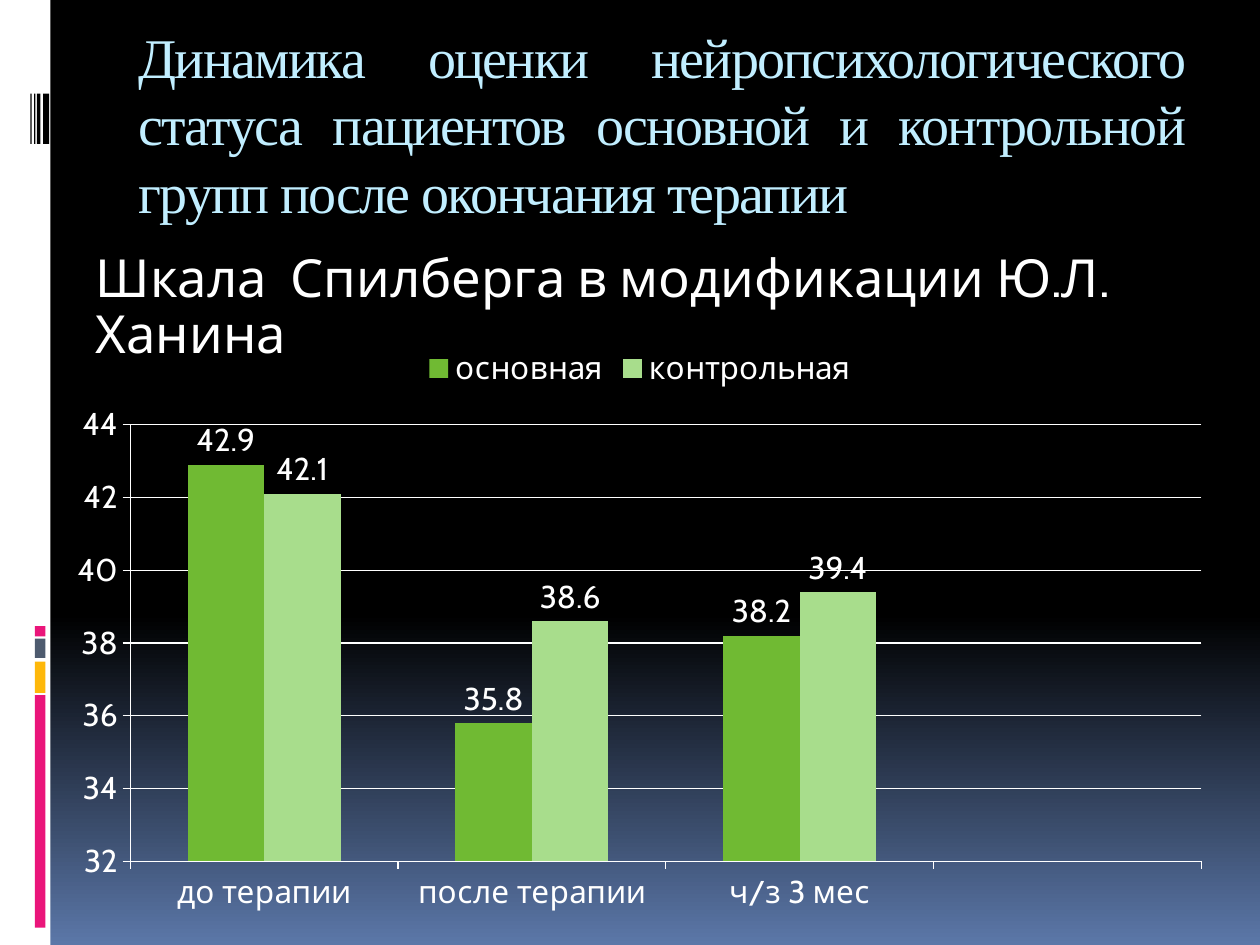
from typing import NamedTuple

from pptx import Presentation
from pptx.chart.data import CategoryChartData
from pptx.dml.color import RGBColor
from pptx.enum import chart as charts, shapes, text
from pptx.util import Pt

WHITE, BLACK, PINK = "FFFFFF", "000000", "EA157A"


class Bar(NamedTuple):
    left: float
    top: float
    width: float
    height: float
    color: str


class Series(NamedTuple):
    name: str
    values: tuple
    color: str


SIDE_BARS = [
    Bar(0, 0, 28.8, 540, WHITE),
    Bar(20, 397.2, 6, 133, PINK),
    Bar(20, 378, 6, 18, "FEB80A"),
    Bar(20, 365, 6, 11, "4E5B6F"),
    Bar(20, 357.8, 6, 5.8, PINK),
] + [
    Bar(left, 53.5, width, 28.8, BLACK)
    for left, width in ((24.6, 3.5), (21.1, 2.1), (19.5, 0.7), (17.4, 0.7))
]
CATEGORIES = ["до терапии", "после терапии", "ч/з 3 мес", ""]
SERIES = [
    Series("основная", (42.9, 35.8, 38.2, None), "70BA33"),
    Series("контрольная", (42.1, 38.6, 39.4, None), "A8DD8C"),
]


def rgb(color: str) -> RGBColor:
    return RGBColor.from_string(color)


def paint(fill, color: str) -> None:
    fill.solid()
    fill.fore_color.rgb = rgb(color)


def style_font(font, size: float, name: str, color: str) -> None:
    font.size, font.name = Pt(size), name
    font.color.rgb = rgb(color)


def draw_background(page) -> None:
    fill = page.background.fill
    fill.gradient()
    fill.gradient_angle = 270
    for stop, position, color in zip(fill.gradient_stops, (0.65, 1), (BLACK, "5B77A8")):
        stop.position = position
        stop.color.rgb = rgb(color)


def draw_bar(page, bar: Bar) -> None:
    box = page.shapes.add_shape(
        shapes.MSO_SHAPE.RECTANGLE, *map(Pt, (bar.left, bar.top, bar.width, bar.height)))
    box.shadow.inherit = False
    paint(box.fill, bar.color)
    box.line.fill.background()


def add_text(page, words: str, area: tuple, *, size: float, font: str, color: str,
             align=text.PP_ALIGN.LEFT, line_spacing: float = 1.0, before: float = 0,
             indent: float = 0, tracking: float = 0) -> None:
    box = page.shapes.add_textbox(*map(Pt, area))
    frame = box.text_frame
    frame.word_wrap = True
    frame.margin_left = Pt(7.2 + indent)
    para = frame.paragraphs[0]
    para.alignment, para.line_spacing, para.space_before = align, line_spacing, Pt(before)
    span = para.add_run()
    span.text = words
    style_font(span.font, size, font, color)
    if tracking:
        span.font._element.set("spc", str(round(tracking * 100)))


def style_axis(axis) -> None:
    axis.major_tick_mark = charts.XL_TICK_MARK.OUTSIDE
    axis.minor_tick_mark = charts.XL_TICK_MARK.NONE
    paint(axis.format.line.fill, WHITE)
    axis.format.line.width = Pt(0.75)


def draw_chart(page) -> None:
    data = CategoryChartData()
    data.categories = CATEGORIES
    for series in SERIES:
        data.add_series(series.name, series.values)
    chart = page.shapes.add_chart(
        charts.XL_CHART_TYPE.COLUMN_CLUSTERED, *map(Pt, (31, 190.8, 668.9, 337)), data).chart
    style_font(chart.font, 18, "Cabin", WHITE)
    chart.has_title = False
    chart.has_legend = True
    chart.legend.position = charts.XL_LEGEND_POSITION.TOP
    chart.legend.include_in_layout = False

    style_axis(chart.category_axis)
    values = chart.value_axis
    style_axis(values)
    values.minimum_scale, values.maximum_scale, values.major_unit = 32, 44, 2
    values.has_major_gridlines = True
    paint(values.major_gridlines.format.line.fill, WHITE)
    values.major_gridlines.format.line.width = Pt(0.75)

    plot = chart.plots[0]
    plot.gap_width, plot.overlap, plot.vary_by_categories = 150, 0, False
    for drawn, series in zip(plot.series, SERIES):
        paint(drawn.format.fill, series.color)
        drawn.invert_if_negative = False
        labels = drawn.data_labels
        labels.show_value = True
        labels.position = charts.XL_LABEL_POSITION.OUTSIDE_END


def main() -> None:
    deck = Presentation()
    deck.slide_width, deck.slide_height = Pt(720), Pt(540)
    page = deck.slides.add_slide(deck.slide_layouts[6])
    draw_background(page)
    for bar in SIDE_BARS:
        draw_bar(page, bar)
    add_text(page, "Динамика оценки нейропсихологического статуса пациентов основной "
             "и контрольной групп после окончания терапии", (72, 9.4, 612, 118.8),
             size=32, font="Times New Roman", color="C1EEFF",
             align=text.PP_ALIGN.JUSTIFY, tracking=-1)
    add_text(page, "Шкала  Спилберга в модификации Ю.Л. Ханина", (42.5, 140.4, 641.5, 360),
             size=30, font="Cabin", color=WHITE, line_spacing=0.9, before=7, indent=5)
    draw_chart(page)
    deck.save("out.pptx")


if __name__ == "__main__":
    main()
